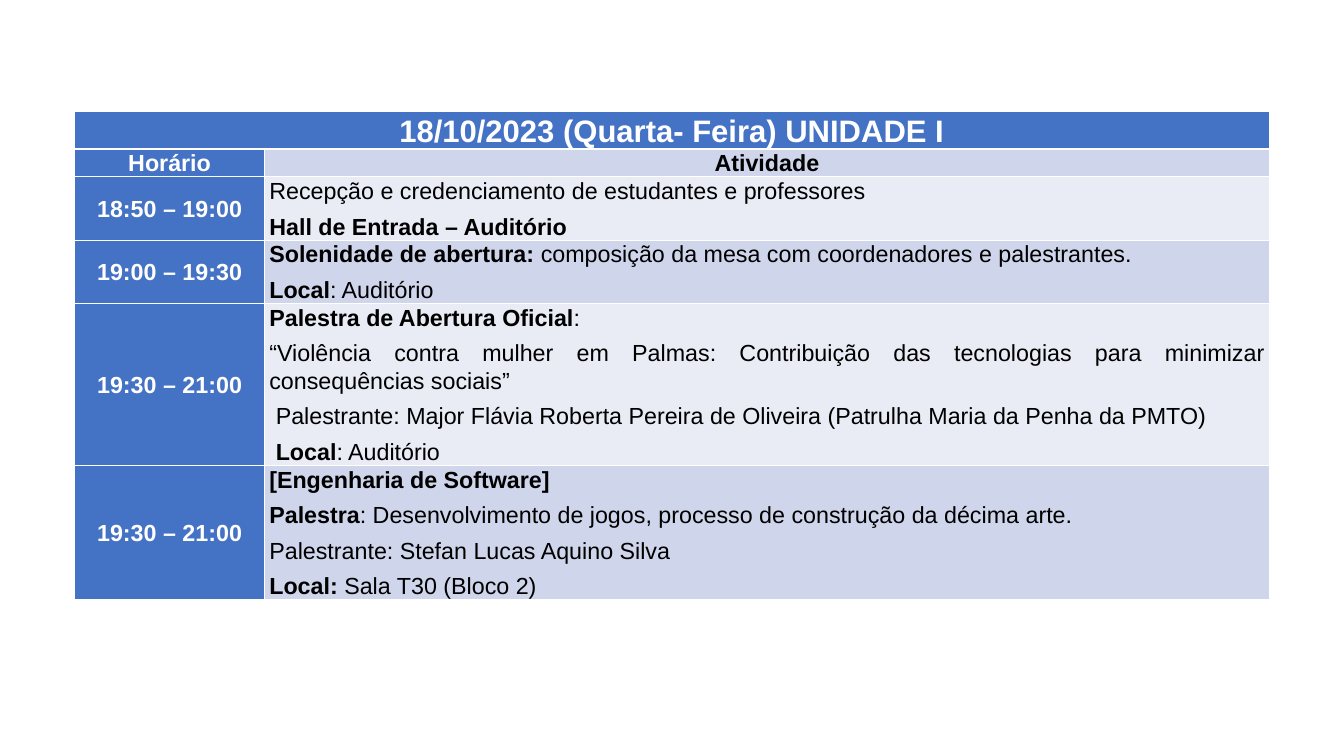
from dataclasses import dataclass

import lxml.etree
import pptx
import pptx.dml.color
import pptx.enum.text
import pptx.oxml.ns
import pptx.table
import pptx.text.text
import pptx.util

Inches = pptx.util.Inches
Pt = pptx.util.Pt
Align = pptx.enum.text.PP_ALIGN
Anchor = pptx.enum.text.MSO_ANCHOR


@dataclass(frozen=True)
class Theme:
    font: str = "Arial"
    large: int = 32
    small: int = 24
    blue: str = "4472C4"
    dark: str = "CFD5EA"
    light: str = "E9EBF5"
    white: str = "FFFFFF"
    black: str = "000000"
    thin: int = 1
    thick: int = 3


@dataclass(frozen=True)
class Line:
    bold: str = ""
    plain: str = ""


@dataclass(frozen=True)
class Slot:
    time: str
    height: float
    lines: tuple[Line, ...]
    align: Align = Align.JUSTIFY


THEME = Theme()
TITLE = "18/10/2023 (Quarta- Feira) UNIDADE I"
TITLE_HEIGHT = 0.37
WIDTHS = (2.72, 14.4)
SLOTS = (
    Slot("Horário", 0.28, (Line("Atividade"),), Align.CENTER),
    Slot("18:50 – 19:00", 0.66, (
        Line(plain="Recepção e credenciamento de estudantes e professores"),
        Line("Hall de Entrada – Auditório"),
    )),
    Slot("19:00 – 19:30", 0.81, (
        Line("Solenidade de abertura: ",
             "composição da mesa com coordenadores e palestrantes."),
        Line("Local", ": Auditório"),
    )),
    Slot("19:30 – 21:00", 1.87, (
        Line("Palestra de Abertura Oficial", ":"),
        Line(plain="“Violência contra mulher em Palmas: Contribuição das "
                   "tecnologias para minimizar consequências sociais”"),
        Line(plain=" Palestrante: Major Flávia Roberta Pereira de Oliveira "
                   "(Patrulha Maria da Penha da PMTO)"),
        Line(" Local", ": Auditório"),
    )),
    Slot("19:30 – 21:00", 1.52, (
        Line("[Engenharia de Software]"),
        Line("Palestra", ": Desenvolvimento de jogos, processo de "
                         "construção da décima arte."),
        Line(plain="Palestrante: Stefan Lucas Aquino Silva"),
        Line("Local: ", "Sala T30 (Bloco 2)"),
    ), Align.LEFT),
)


def add_edge(cell: pptx.table._Cell, side: str, width: int) -> None:
    qn = pptx.oxml.ns.qn
    edge = lxml.etree.SubElement(
        cell._tc.get_or_add_tcPr(), qn(f"a:ln{side}"), w=str(Pt(width)))
    fill = lxml.etree.SubElement(edge, qn("a:solidFill"))
    lxml.etree.SubElement(fill, qn("a:srgbClr"), val=THEME.white)


def frame_cell(cell: pptx.table._Cell, fill: str, top: int, base: int) -> None:
    for side, width in zip("LRTB", (THEME.thin, THEME.thin, top, base)):
        add_edge(cell, side, width)
    cell.fill.solid()
    cell.fill.fore_color.rgb = pptx.dml.color.RGBColor.from_string(fill)
    cell.margin_left = cell.margin_right = Inches(0.07)
    cell.margin_top = cell.margin_bottom = 0


def add_text(par: pptx.text.text._Paragraph, text: str, bold: bool,
             size: int, color: str) -> None:
    run = par.add_run()
    run.text = text
    run.font.name = THEME.font
    run.font.size = Pt(size)
    run.font.bold = bold
    run.font.color.rgb = pptx.dml.color.RGBColor.from_string(color)


def write_lines(cell: pptx.table._Cell, lines: tuple[Line, ...], align: Align,
                color: str, size: int = THEME.small) -> None:
    frame = cell.text_frame
    for index, line in enumerate(lines):
        par = frame.add_paragraph() if index else frame.paragraphs[0]
        par.alignment = align
        par.line_spacing = 1.07
        par.space_after = Pt(8)
        for text, bold in ((line.bold, True), (line.plain, False)):
            if text:
                add_text(par, text, bold, size, color)


def draw_title(table: pptx.table.Table) -> None:
    table.rows[0].height = Inches(TITLE_HEIGHT)
    for cell in table.rows[0].cells:
        frame_cell(cell, THEME.blue, THEME.thin, THEME.thick)
    table.cell(0, 0).merge(table.cell(0, 1))
    write_lines(table.cell(0, 0), (Line(TITLE),), Align.CENTER,
                THEME.white, THEME.large)


def draw_slot(table: pptx.table.Table, index: int, slot: Slot) -> None:
    table.rows[index].height = Inches(slot.height)
    time, event = table.rows[index].cells
    shade = THEME.dark if index % 2 else THEME.light
    top = THEME.thick if index == 1 else THEME.thin
    for cell, fill in ((time, THEME.blue), (event, shade)):
        frame_cell(cell, fill, top, THEME.thin)
        if index > 1:
            cell.vertical_anchor = Anchor.MIDDLE
    write_lines(time, (Line(slot.time),), Align.CENTER, THEME.white)
    write_lines(event, slot.lines, slot.align, THEME.black)


def main() -> None:
    deck = pptx.Presentation()
    deck.slide_width = Inches(19.26)
    deck.slide_height = Inches(10.83)
    slide = deck.slides.add_slide(deck.slide_layouts[6])
    height = TITLE_HEIGHT + sum(slot.height for slot in SLOTS)
    table = slide.shapes.add_table(
        len(SLOTS) + 1, len(WIDTHS), Inches(1.07), Inches(1.6),
        Inches(sum(WIDTHS)), Inches(height)).table
    for column, width in zip(table.columns, WIDTHS):
        column.width = Inches(width)
    draw_title(table)
    for index, slot in enumerate(SLOTS, 1):
        draw_slot(table, index, slot)
    deck.save("out.pptx")


if __name__ == "__main__":
    main()
